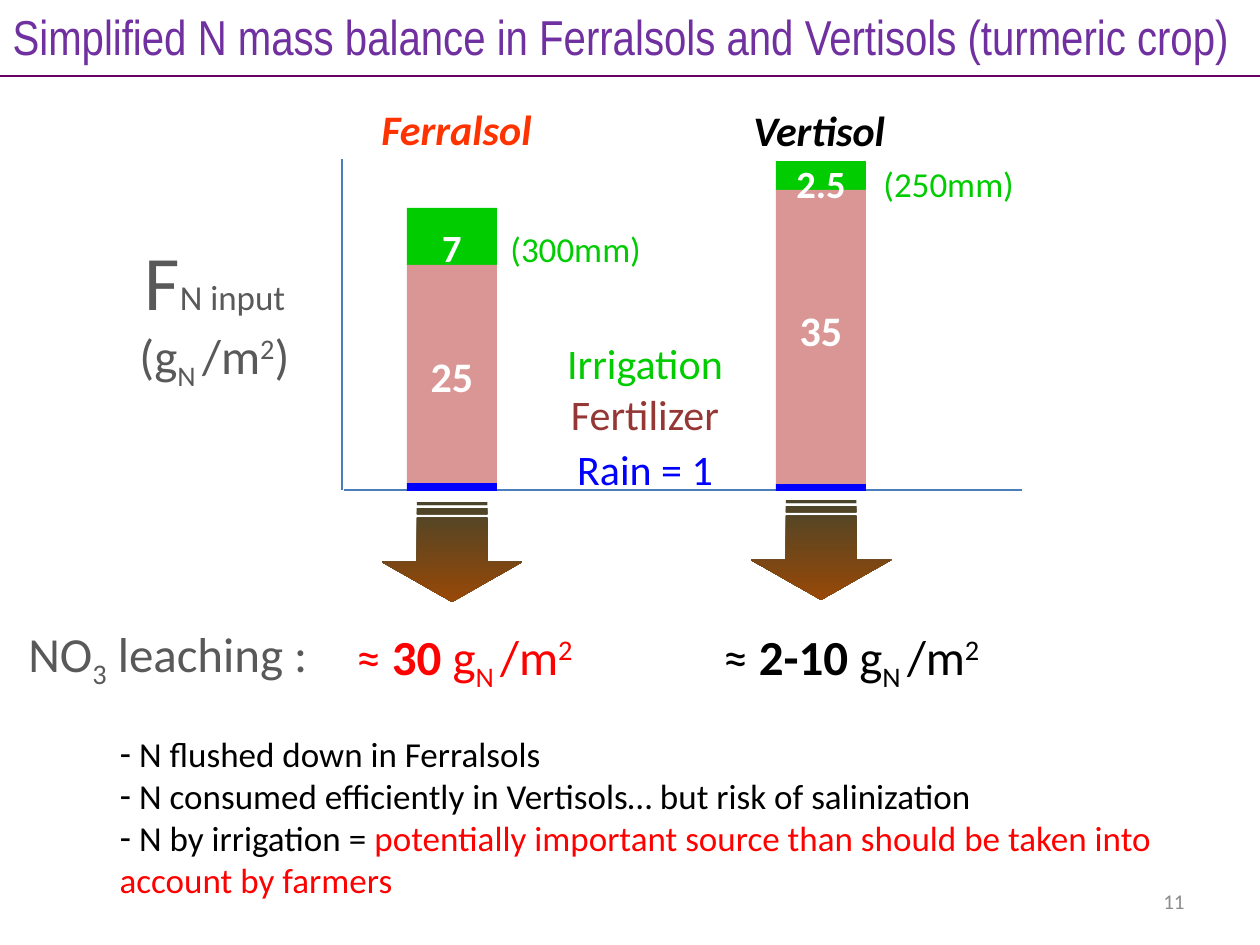
import pptx
import pptx.util
import pptx.dml.color
import pptx.enum.shapes
import pptx.enum.text
import pptx.oxml
import pptx.oxml.ns
import lxml.etree

PX = 914400 / 126
ALIGN = pptx.enum.text.PP_ALIGN
ANCHOR = pptx.enum.text.MSO_ANCHOR
SHAPE = pptx.enum.shapes.MSO_SHAPE
SUB, SUP = -25000, 30000

COLORS = {
    "purple": "7030A0", "rule": "660066", "axis": "4B7EBC", "grey": "595959",
    "number": "8C8C8C", "orange": "FF3300", "red": "FF0000", "black": "000000",
    "white": "FFFFFF", "irrigation": "00CC00", "fertilizer": "D99694",
    "fertilizer_text": "953735", "rain": "0000FF", "soil": "4A452A", "earth": "984807",
}

TITLE = "Simplified N mass balance in Ferralsols and Vertisols (turmeric crop)"
FINDINGS = [
    [(" N flushed down in Ferralsols", {})],
    [(" N consumed efficiently in Vertisols… but risk of salinization", {})],
    [(" N by irrigation = ", {}),
     ("potentially important source than should be taken into account by farmers",
      {"color": "red"})],
]
UNIT = [("N ", {"base": SUB}), ("/m", {}), ("2", {"base": SUP})]

BAR_WIDTH = 90
LAYERS = ["irrigation", "fertilizer", "rain"]
SOILS = [
    {"name": "Ferralsol", "color": "orange", "name_at": (369, 97), "bar_left": 407,
     "edges": [208, 265, 483, 491], "values": [("7", 22, 247), ("25", 24, 376)],
     "water": ("(300mm)", 498, 248), "arrow_top": 502,
     "leaching": "30 ", "leaching_left": 344, "leaching_color": "red"},
    {"name": "Vertisol", "color": "black", "name_at": (741, 98), "bar_left": 776,
     "edges": [161, 190, 484, 491], "values": [("2.5", 22, 183), ("35", 24, 330)],
     "water": ("(250mm)", 871, 184), "arrow_top": 500,
     "leaching": "2-10 ", "leaching_left": 711, "leaching_color": "black"},
]
LEGEND = [("Irrigation", "irrigation", 331), ("Fertilizer", "fertilizer_text", 382),
          ("Rain = 1", "rain", 437)]
LINES = [((342, 159), (342, 490), "axis"), ((344, 490), (1022, 490), "axis"),
         ((0, 76), (1260, 76), "rule")]


def emu(value):
    return pptx.util.Emu(round(value * PX))


def rgb(name):
    return pptx.dml.color.RGBColor.from_string(COLORS[name])


def place(box, left, top, width, height):
    box.left, box.top, box.width, box.height = map(emu, (left, top, width, height))


def write(para, spans, size, color, font="Calibri", align=ALIGN.LEFT):
    para.alignment = align
    for text, style in spans:
        span = para.add_run()
        span.text = text
        span.font.name = font
        span.font.size = pptx.util.Pt(style.get("size", size))
        span.font.color.rgb = rgb(style.get("color", color))
        span.font.bold = style.get("bold", False)
        span.font.italic = style.get("italic", False)
        if "base" in style:
            span.font._element.set("baseline", str(style["base"]))


def add_text(page, area, spans, size, color, align=ALIGN.LEFT, anchor=ANCHOR.TOP):
    box = page.shapes.add_textbox(*map(emu, area))
    box.text_frame.word_wrap = True
    box.text_frame.vertical_anchor = anchor
    write(box.text_frame.paragraphs[0], spans, size, color, align=align)


def add_line(page, start, end, color):
    line = page.shapes.add_connector(
        pptx.enum.shapes.MSO_CONNECTOR.STRAIGHT, *map(emu, start + end))
    line.line.color.rgb = rgb(color)
    line.line.width = pptx.util.Pt(0.75)
    lxml.etree.SubElement(line._element.spPr, pptx.oxml.ns.qn("a:effectLst"))


def add_shape(page, kind, area):
    shape = page.shapes.add_shape(kind, *map(emu, area))
    shape.shadow.inherit = False
    shape.line.fill.background()
    return shape


def add_arrow(page, center, top):
    length, breadth = 100, 141
    arrow = add_shape(page, SHAPE.STRIPED_RIGHT_ARROW,
                      (center - length / 2, top + (length - breadth) / 2, length, breadth))
    arrow.rotation = 90
    arrow.adjustments[0], arrow.adjustments[1] = 0.5, 0.4
    arrow.fill.gradient()
    arrow.fill.gradient_angle = 0
    for stop, color in zip(arrow.fill.gradient_stops, ("soil", "earth")):
        stop.color.rgb = rgb(color)


def add_soil(page, soil):
    left, edges = soil["bar_left"], soil["edges"]
    center = left + BAR_WIDTH / 2
    add_text(page, (*soil["name_at"], 300, 63),
             [(soil["name"], {"bold": True, "italic": True})], 24, soil["color"])
    for layer, top, bottom in zip(LAYERS, edges, edges[1:]):
        bar = add_shape(page, SHAPE.RECTANGLE, (left, top, BAR_WIDTH, bottom - top))
        bar.fill.solid()
        bar.fill.fore_color.rgb = rgb(layer)
    for text, size, middle in soil["values"]:
        add_text(page, (left, middle - 30, BAR_WIDTH, 60), [(text, {"bold": True})],
                 size, "white", ALIGN.CENTER, ANCHOR.MIDDLE)
    text, water_left, middle = soil["water"]
    add_text(page, (water_left, middle - 30, 180, 60), [(text, {})],
             20, "irrigation", anchor=ANCHOR.MIDDLE)
    add_arrow(page, center, soil["arrow_top"])
    spans = [("≈ ", {}), (soil["leaching"], {"bold": True}), ("g", {})] + UNIT
    add_text(page, (soil["leaching_left"], 620, 320, 72), spans, 28, soil["leaching_color"])


def main():
    deck = pptx.Presentation()
    deck.slide_width, deck.slide_height = emu(1260), emu(945)
    page = deck.slides.add_slide(deck.slide_layouts[1])

    title, body = page.shapes.title, page.placeholders[1]
    place(title, 0, 0, 1260, 72)
    place(body, 107, 726, 1153, 183)
    for box in (title, body):
        box.text_frame.auto_size = pptx.enum.text.MSO_AUTO_SIZE.NONE
        box.text_frame.vertical_anchor = ANCHOR.TOP
    write(title.text_frame.paragraphs[0], [(TITLE, {})], 28, "purple", "Arial Narrow")
    for index, spans in enumerate(FINDINGS):
        frame = body.text_frame
        para = frame.add_paragraph() if index else frame.paragraphs[0]
        para.space_before = pptx.util.Pt(0)
        settings = para._p.get_or_add_pPr()
        settings.set("marL", "0")
        settings.set("indent", "0")
        lxml.etree.SubElement(settings, pptx.oxml.ns.qn("a:buChar")).set("char", "-")
        write(para, spans, 20, "black")

    for start, end, color in LINES:
        add_line(page, start, end, color)
    for soil in SOILS:
        add_soil(page, soil)
    for text, color, top in LEGEND:
        add_text(page, (546, top, 198, 63), [(text, {})], 24, color, ALIGN.CENTER)

    add_text(page, (132, 227, 214, 106), [("F", {"size": 44}), ("N input", {})], 20, "grey")
    add_text(page, (127, 319, 232, 72), [("(g", {})] + UNIT + [(")", {})], 28, "grey")
    add_text(page, (16, 617, 330, 72),
             [("NO", {}), ("3", {"base": SUB}), (" leaching :", {})], 28, "grey")
    add_text(page, (903, 876, 294, 50), [("11", {})], 12, "number",
             ALIGN.RIGHT, ANCHOR.MIDDLE)
    deck.save("out.pptx")


if __name__ == "__main__":
    main()
